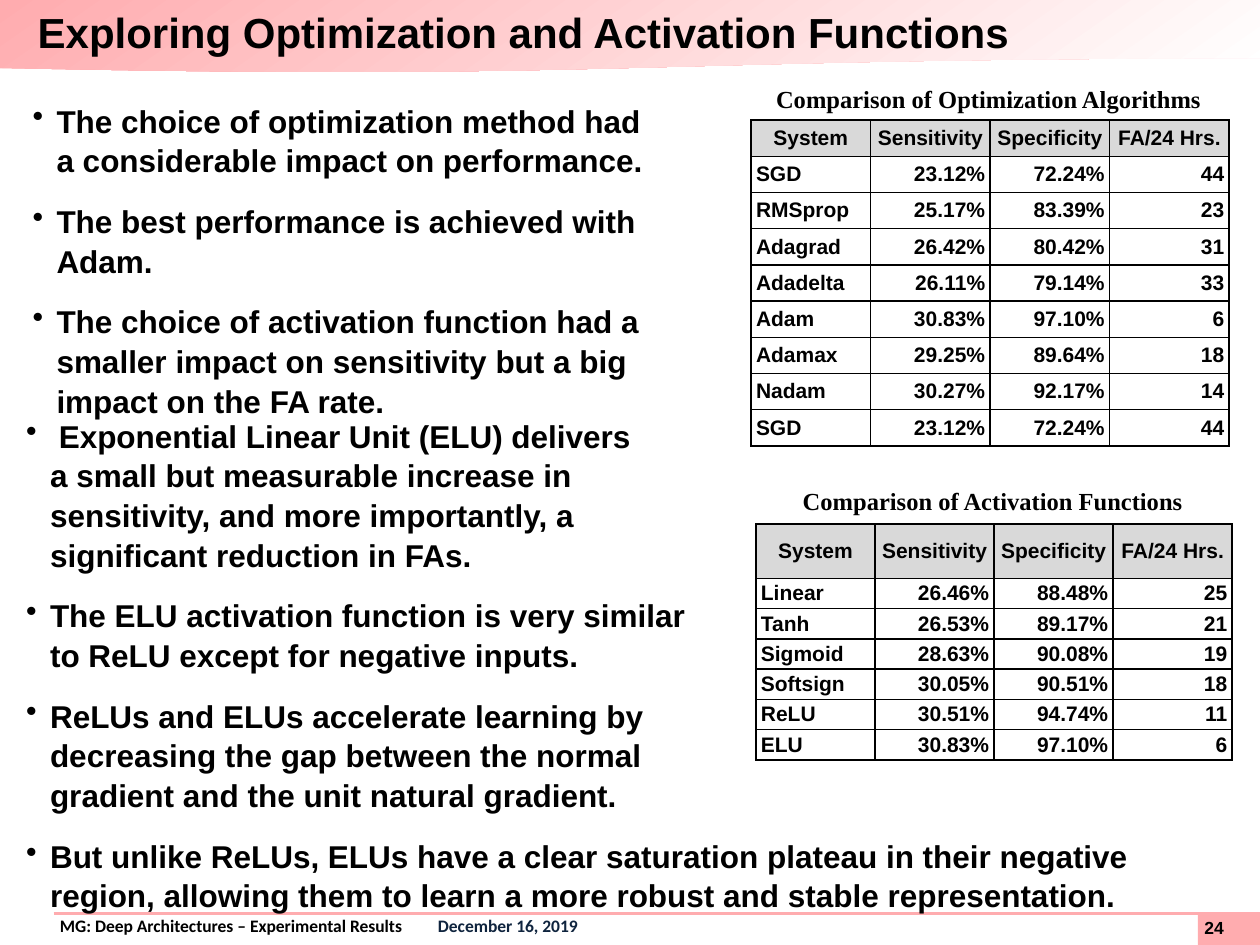
import pptx
import pptx.util
import pptx.dml.color
import pptx.enum.dml
import pptx.enum.shapes
import pptx.enum.text
import pptx.oxml
import pptx.oxml.ns
from dataclasses import dataclass

Cm, Pt = pptx.util.Cm, pptx.util.Pt
RGB = pptx.dml.color.RGBColor.from_string
ALIGN = pptx.enum.text.PP_ALIGN
MIDDLE = pptx.enum.text.MSO_ANCHOR.MIDDLE
SHAPE = pptx.enum.shapes.MSO_SHAPE
A_NS = pptx.oxml.ns.nsdecls("a")


@dataclass
class Theme:
    pink: str = "FFACAF"
    white: str = "FFFFFF"
    black: str = "000000"
    navy: str = "0F243E"
    gray: str = "D9D9D9"
    sans: str = "Arial"
    serif: str = "Times New Roman"
    footer: str = "Calibri"
    title_size: int = 24
    body_size: int = 18
    caption_size: int = 14
    table_size: int = 12
    footer_size: int = 10


theme = Theme()


def style(paragraph, size, face=theme.sans, align=ALIGN.LEFT):
    paragraph.alignment = align
    for run in paragraph.runs:
        run.font.size, run.font.name, run.font.bold = Pt(size), face, True
        run.font.color.rgb = RGB(theme.black)


def text_frame(left, top, width, height, inset=0):
    frame = slide.shapes.add_textbox(Cm(left), Cm(top), Cm(width), Cm(height)).text_frame
    frame.word_wrap = True
    frame.margin_left = frame.margin_right = Cm(inset)
    frame.margin_top = frame.margin_bottom = Cm(inset / 2)
    return frame


deck = pptx.Presentation()
deck.slide_width, deck.slide_height = Cm(25.4), Cm(19.05)
slide = deck.slides.add_slide(deck.slide_layouts[5])

# Header band and page number block
band = slide.shapes.add_shape(SHAPE.FLOWCHART_DOCUMENT, 0, 0, Cm(25.4), Cm(1.47))
band.fill.gradient()
band.fill.gradient_angle = 305
for stop, color, position in zip(band.fill.gradient_stops, (theme.pink, theme.white), (0, 1)):
    stop.color.rgb = RGB(color)
    stop.position = position
page_block = slide.shapes.add_shape(SHAPE.RECTANGLE, Cm(24.15), Cm(18.39), Cm(1.25), Cm(0.66))
page_block.fill.solid()
page_block.fill.fore_color.rgb = RGB(theme.pink)
for shape in (band, page_block):
    shape.line.fill.background()
    shape.shadow.inherit = False

# Footer: text with a right tab for the date, rule and page number
footer = text_frame(0.1, 18.36, 25.3, 0.66, 0.25).paragraphs[0]
footer_props = footer._p.get_or_add_pPr()
footer_props.set("marL", str(Cm(0.86)))
footer_props.set("indent", "0")
footer_props.append(pptx.oxml.parse_xml(
    f'<a:tabLst {A_NS}><a:tab pos="{Cm(23.65)}" algn="r"/></a:tabLst>'))
for words in ("MG: Deep Architectures – Experimental Results", "\tDecember 16, 2019"):
    footer.add_run().text = words
footer.line_spacing = 0.95
style(footer, theme.footer_size, theme.footer)
footer.runs[1].font.color.rgb = RGB(theme.navy)

rule = slide.shapes.add_connector(
    pptx.enum.shapes.MSO_CONNECTOR.STRAIGHT, Cm(1.08), Cm(18.41), Cm(25.4), Cm(18.41))
rule.line.color.rgb = RGB(theme.pink)
rule.line.width = Pt(1.5)
rule._element.spPr.append(pptx.oxml.parse_xml(f"<a:effectLst {A_NS}/>"))

page_number = text_frame(24.28, 18.49, 1.02, 0.43)
page_number.text = "24"
page_number.vertical_anchor = MIDDLE
style(page_number.paragraphs[0], theme.footer_size)

# Title, raised above the header band
title = slide.shapes.title
title.left, title.top, title.width, title.height = 0, 0, Cm(25.4), Cm(1.27)
heading = title.text_frame
heading.text = "Exploring Optimization and Activation Functions"
heading.auto_size = pptx.enum.text.MSO_AUTO_SIZE.NONE
heading.vertical_anchor = MIDDLE
heading.margin_left = Cm(0.76)
heading.margin_top = heading.margin_right = heading.margin_bottom = 0
style(heading.paragraphs[0], theme.title_size)
slide.shapes._spTree.append(title._element)

# Bullet lists: place, then points
bullet_lists = [
    ((0.66, 2.01, 12.52, 6.2), [
        "The choice of optimization method had a considerable impact on performance.",
        "The best performance is achieved with Adam.",
        "The choice of activation function had a\vsmaller impact on sensitivity but a big "
        "\vimpact on the FA rate.",
    ]),
    ((0.53, 8.36, 24.2, 9.8), [
        " Exponential Linear Unit (ELU) delivers \va small but measurable increase in "
        "\vsensitivity, and more importantly, a\vsignificant reduction in FAs.",
        "The ELU activation function is very similar\vto ReLU except for negative inputs.",
        "ReLUs and ELUs accelerate learning by\vdecreasing the gap between the normal "
        "\vgradient and the unit natural gradient.",
        "But unlike ReLUs, ELUs have a clear saturation plateau in their negative region, "
        "allowing them to learn a more robust and stable representation.",
    ]),
]
for place, points in bullet_lists:
    findings = text_frame(*place)
    for number, words in enumerate(points):
        point = findings.add_paragraph() if number else findings.paragraphs[0]
        point_props = point._p.get_or_add_pPr()
        point_props.set("marL", str(Cm(0.48)))
        point_props.set("indent", str(-Cm(0.48)))
        point_props.append(pptx.oxml.parse_xml(f'<a:buChar {A_NS} char="•"/>'))
        point.text = words
        point.line_spacing = 1.05
        point.space_after = Pt(12)
        style(point, theme.body_size)

# Tables: caption, caption place, left, top, column width, header and row height, rows
header = ("System", "Sensitivity", "Specificity", "FA/24 Hrs.")
comparisons = [
    ("Comparison of Optimization Algorithms", (15.14, 1.57, 9.58, 0.86),
     15.14, 2.42, 2.41, 0.73, 0.73, [
         ("SGD", "23.12%", "72.24%", "44"),
         ("RMSprop", "25.17%", "83.39%", "23"),
         ("Adagrad", "26.42%", "80.42%", "31"),
         ("Adadelta", "26.11%", "79.14%", "33"),
         ("Adam", "30.83%", "97.10%", "6"),
         ("Adamax", "29.25%", "89.64%", "18"),
         ("Nadam", "30.27%", "92.17%", "14"),
         ("SGD", "23.12%", "72.24%", "44"),
     ]),
    ("Comparison of Activation Functions", (15.24, 9.68, 9.55, 0.86),
     15.24, 10.56, 2.4, 1.1, 0.61, [
         ("Linear", "26.46%", "88.48%", "25"),
         ("Tanh", "26.53%", "89.17%", "21"),
         ("Sigmoid", "28.63%", "90.08%", "19"),
         ("Softsign", "30.05%", "90.51%", "18"),
         ("ReLU", "30.51%", "94.74%", "11"),
         ("ELU", "30.83%", "97.10%", "6"),
     ]),
]
for caption, place, left, top, column_width, header_height, row_height, systems in comparisons:
    caption_frame = text_frame(*place, 0.25)
    caption_frame.text = caption
    style(caption_frame.paragraphs[0], theme.caption_size, theme.serif, ALIGN.CENTER)

    results = slide.shapes.add_table(
        len(systems) + 1, len(header), Cm(left), Cm(top), Cm(column_width * len(header)),
        Cm(header_height + row_height * len(systems))).table
    for column in results.columns:
        column.width = Cm(column_width)
    for r, values in enumerate([header] + systems):
        results.rows[r].height = Cm(row_height if r else header_height)
        for c, value in enumerate(values):
            cell = results.cell(r, c)
            cell.text = value
            cell.vertical_anchor = MIDDLE
            cell.margin_left = cell.margin_right = Cm(0.1)
            cell.margin_top = cell.margin_bottom = Cm(0.05)
            if r == 0:
                cell.fill.solid()
                cell.fill.fore_color.rgb = RGB(theme.gray)
            else:
                cell.fill.background()
            align = ALIGN.CENTER if r == 0 else ALIGN.RIGHT if c else ALIGN.LEFT
            style(cell.text_frame.paragraphs[0], theme.table_size, align=align)
            for order, side in enumerate(("lnL", "lnR", "lnT", "lnB")):
                cell._tc.get_or_add_tcPr().insert(order, pptx.oxml.parse_xml(
                    f'<a:{side} {A_NS} w="{Pt(1)}"><a:solidFill>'
                    f'<a:srgbClr val="{theme.black}"/></a:solidFill></a:{side}>'))

deck.save("out.pptx")
